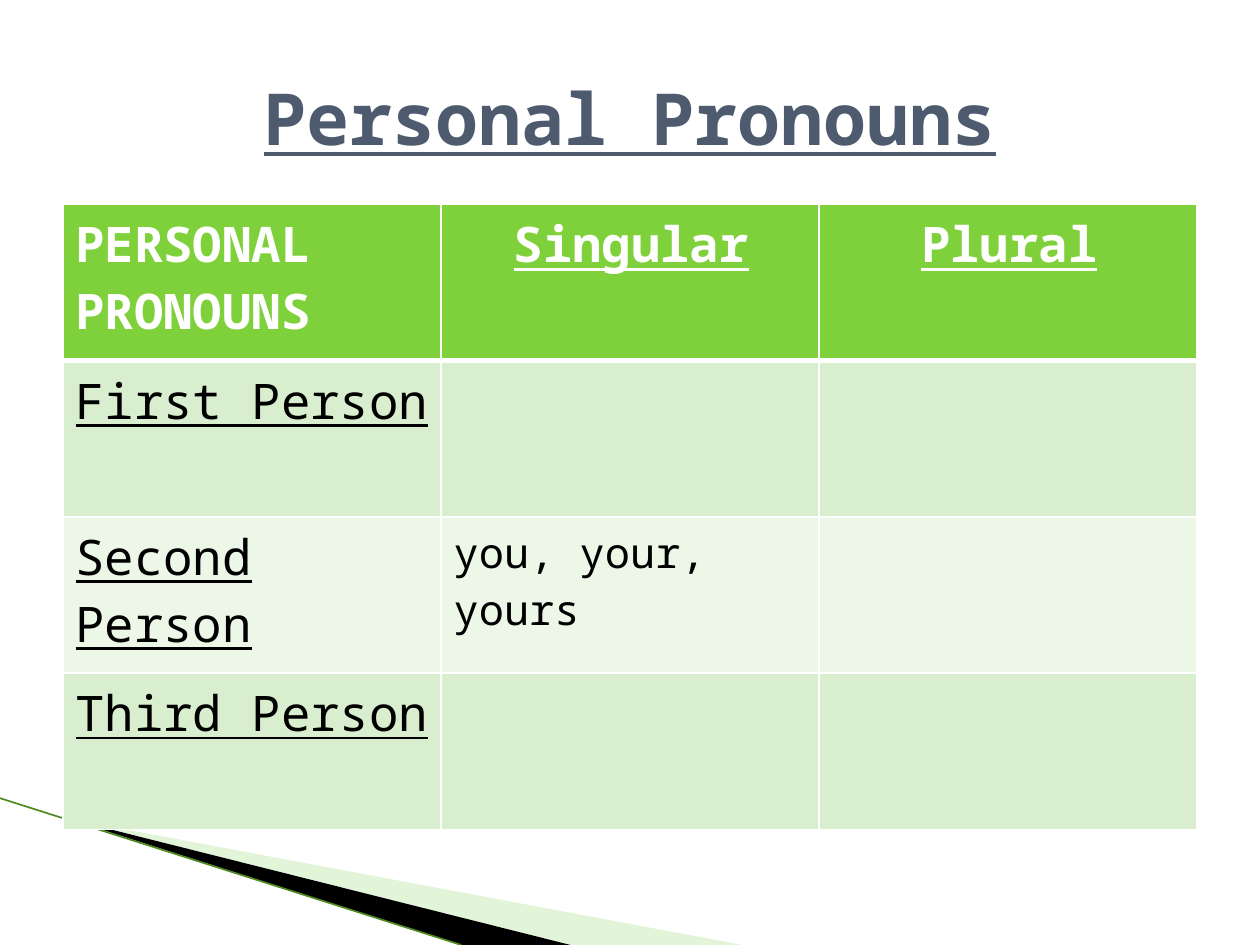
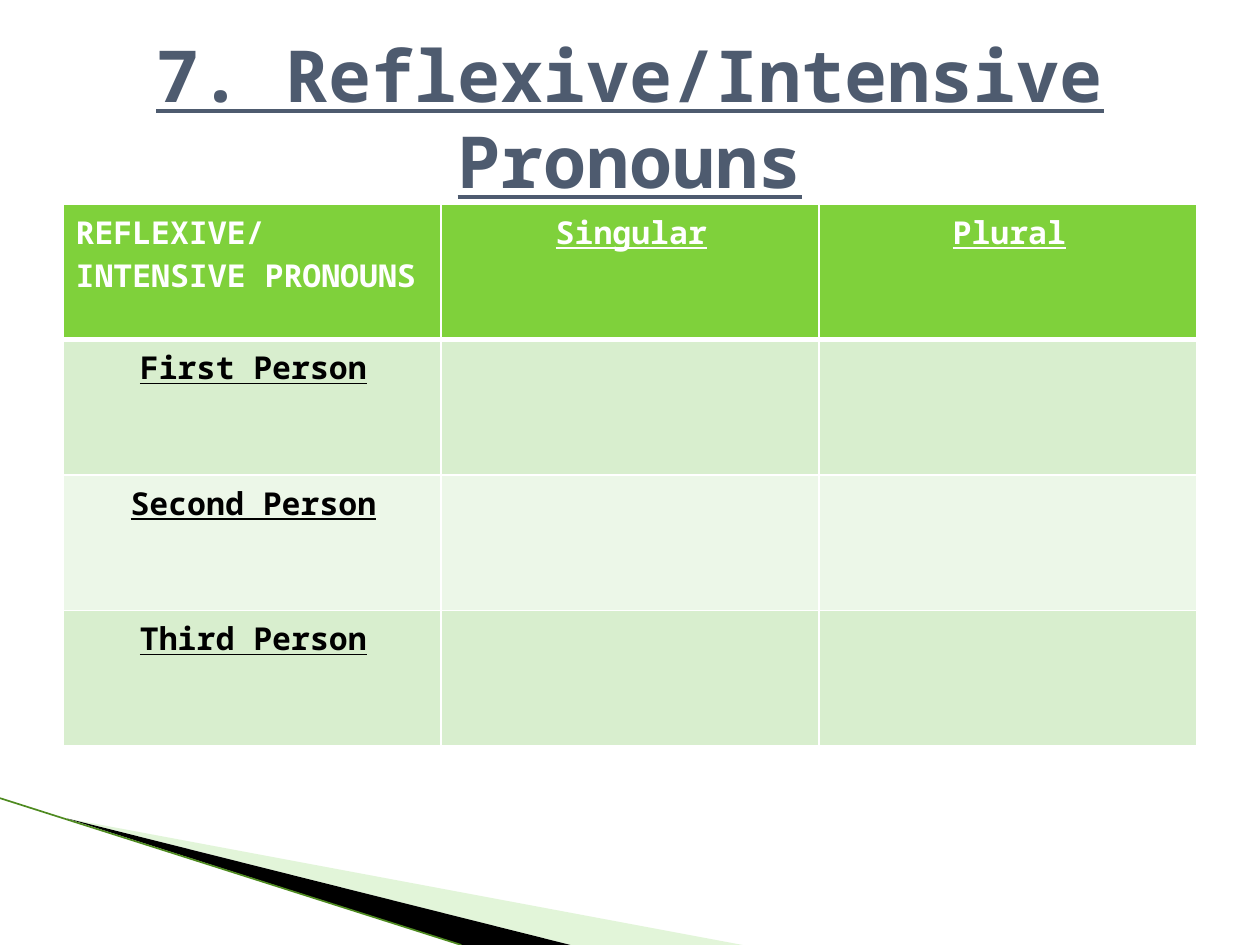
from lxml import etree
from pptx import Presentation
from pptx.dml.color import RGBColor
from pptx.enum.shapes import MSO_CONNECTOR
from pptx.enum.text import MSO_ANCHOR, PP_ALIGN
from pptx.oxml.ns import qn
from pptx.util import Cm, Pt

STRAIGHT = MSO_CONNECTOR.STRAIGHT
LEFT, CENTER = PP_ALIGN.LEFT, PP_ALIGN.CENTER
MIDDLE = MSO_ANCHOR.MIDDLE
TITLE_ONLY = 5

FONT = "Noto Sans Mono"
WHITE, BLACK, SLATE = "FFFFFF", "000000", "4E5B6F"
GREEN, PALE_GREEN, EDGE_GREEN = "7FD13B", "B8E7A1", "4E8A20"
BANDS = ["D8EECE", "ECF7E8"]

WIDTH, HEIGHT = 25.4, 19.05
TITLE_BOX = (1.27, 0.76, 22.86, 3.18)
TABLE_LEFT, TABLE_TOP, TABLE_WIDTH = 1.27, 4.12, 22.86


def rgb(hex_color):
    return RGBColor.from_string(hex_color)


def write(tf, text, size=18, color=BLACK, bold=False, underline=False, align=LEFT):
    p = tf.paragraphs[0]
    p.alignment = align
    r = p.add_run()
    r.text = text
    font = r.font
    font.name, font.size = FONT, Pt(size)
    font.bold, font.underline = bold, underline
    font.color.rgb = rgb(color)


def add_wedge(slide, points, color, opacity=100):
    """Fill a triangle whose corners are given in centimetres."""
    start, *rest = [(Cm(x), Cm(y)) for x, y in points]
    builder = slide.shapes.build_freeform(*start)
    builder.add_line_segments(rest)
    sp = builder.convert_to_shape()
    sp.shadow.inherit = False
    sp.line.fill.background()
    sp.fill.solid()
    sp.fill.fore_color.rgb = rgb(color)
    if opacity < 100:
        clr = sp.fill._xPr.find(f".//{qn('a:srgbClr')}")
        etree.SubElement(clr, qn("a:alpha"), val=str(opacity * 1000))


def add_corner(slide):
    """Draw the swoosh in the lower left corner."""
    add_wedge(slide, [(1.4, 16.51), (14.97, HEIGHT), (11.5, HEIGHT)], PALE_GREEN, 40)
    add_wedge(slide, [(1.35, 16.5), (11.5, HEIGHT), (9.3, HEIGHT)], BLACK)
    edge = slide.shapes.add_connector(STRAIGHT, 0, Cm(16.09), Cm(9.3), Cm(HEIGHT))
    edge.line.color.rgb = rgb(EDGE_GREEN)
    edge.line.width = Pt(0.95)
    etree.SubElement(edge._element.spPr, qn("a:effectLst"))


def add_title(slide, text):
    title = slide.shapes.title
    title.left, title.top, title.width, title.height = map(Cm, TITLE_BOX)
    tf = title.text_frame
    tf.word_wrap = True
    tf.vertical_anchor = MIDDLE
    write(tf, text, size=41, color=SLATE, bold=True, underline=True, align=CENTER)


def style_cell(cell, color, top=1, bottom=1):
    """Give a cell its fill and white borders, widths in points."""
    tcPr = cell._tc.get_or_add_tcPr()
    for side, width in (("L", 1), ("R", 1), ("T", top), ("B", bottom)):
        ln = etree.SubElement(tcPr, qn(f"a:ln{side}"), w=str(Pt(width)))
        fill = etree.SubElement(ln, qn("a:solidFill"))
        etree.SubElement(fill, qn("a:srgbClr"), val=WHITE)
    cell.fill.solid()
    cell.fill.fore_color.rgb = rgb(color)
    cell.margin_right = Cm(0.2)


def add_pronoun_table(slide, heading, row_height, size, person_format, pronouns):
    """Set persons against number; pronouns maps (row, column) to text."""
    persons = ["First Person", "Second Person", "Third Person"]
    rows = len(persons) + 1
    table = slide.shapes.add_table(
        rows, 3, Cm(TABLE_LEFT), Cm(TABLE_TOP), Cm(TABLE_WIDTH), Cm(row_height * rows)
    ).table
    for row in range(rows):
        color = GREEN if row == 0 else BANDS[(row - 1) % 2]
        for col in range(3):
            style_cell(table.cell(row, col), color,
                       top=3 if row == 1 else 1, bottom=3 if row == 0 else 1)

    header = dict(size=size, color=WHITE, bold=True)
    write(table.cell(0, 0).text_frame, heading, **header)
    for col, number in enumerate(["Singular", "Plural"], 1):
        write(table.cell(0, col).text_frame, number, underline=True, align=CENTER, **header)
    for row, person in enumerate(persons, 1):
        write(table.cell(row, 0).text_frame, person, size=size, underline=True, **person_format)
    for place, text in pronouns.items():
        write(table.cell(*place).text_frame, text, size=24)


def add_pronoun_slide(prs, title, heading, row_height, size, person_format, pronouns):
    slide = prs.slides.add_slide(prs.slide_layouts[TITLE_ONLY])
    add_corner(slide)
    add_title(slide, title)
    add_pronoun_table(slide, heading, row_height, size, person_format, pronouns)


def main():
    prs = Presentation()
    prs.slide_width, prs.slide_height = Cm(WIDTH), Cm(HEIGHT)
    add_pronoun_slide(
        prs, "Personal Pronouns", "PERSONAL PRONOUNS", row_height=3.15, size=28,
        person_format={}, pronouns={(2, 1): "you, your, yours"})
    add_pronoun_slide(
        prs, "7. Reflexive/Intensive Pronouns", "REFLEXIVE/INTENSIVE PRONOUNS",
        row_height=2.73, size=18,
        person_format=dict(bold=True, align=CENTER), pronouns={})
    prs.save("out.pptx")


if __name__ == "__main__":
    main()
